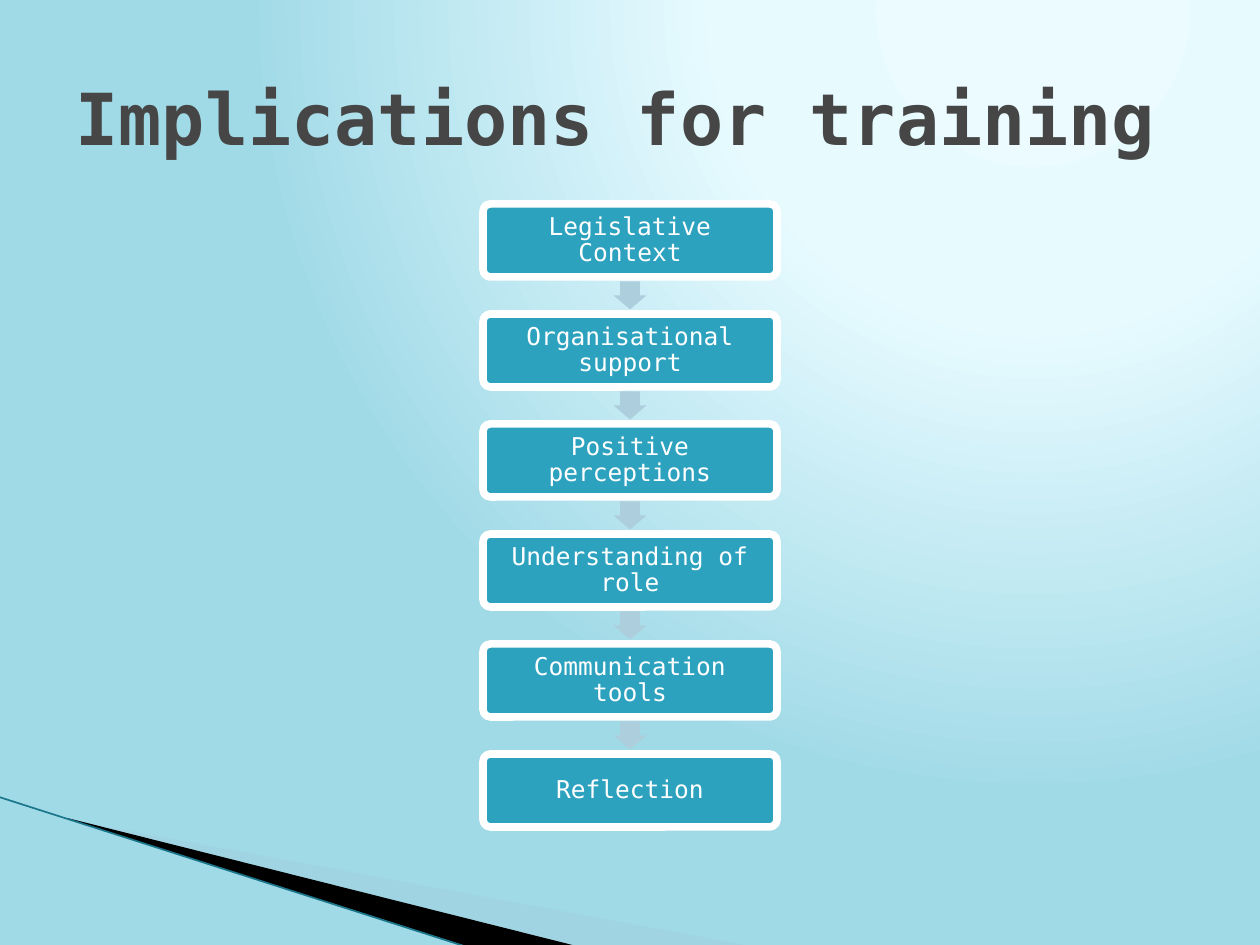
from lxml import etree
from pptx import Presentation
from pptx.dml.color import RGBColor
from pptx.enum.shapes import MSO_CONNECTOR, MSO_SHAPE
from pptx.enum.text import MSO_ANCHOR, PP_ALIGN
from pptx.oxml import parse_xml
from pptx.oxml.ns import nsdecls, qn
from pptx.util import Emu, Pt

EMU_PER_PX = 914400 / 126
FONT = "DejaVu Sans Mono"
WHITE = RGBColor(0xFF, 0xFF, 0xFF)
BLACK = RGBColor(0x00, 0x00, 0x00)
TITLE_GREY = RGBColor(0x46, 0x46, 0x46)
STEP_BLUE = RGBColor(0x2D, 0xA2, 0xBF)
ARROW_BLUE = RGBColor(0xAD, 0xCE, 0xDC)
WEDGE_BLUE = RGBColor(0xA0, 0xCB, 0xDC)
EDGE_TEAL = RGBColor(0x1A, 0x76, 0x8A)
SKY_STOPS = [
    (0, RGBColor(0xEB, 0xFB, 0xFF)),
    (40, RGBColor(0xE7, 0xFB, 0xFF)),
    (100, RGBColor(0xA1, 0xDA, 0xE7)),
]
STEPS = [
    "Legislative Context",
    "Organisational support",
    "Positive perceptions",
    "Understanding of role",
    "Communication tools",
    "Reflection",
]


def px(length):
    return Emu(round(length * EMU_PER_PX))


def format_text(paragraph, size, color, bold=False):
    for run in paragraph.runs:
        run.font.name = FONT
        run.font.size = Pt(size)
        run.font.bold = bold
        run.font.color.rgb = color


def paint(shape, color):
    shape.shadow.inherit = False
    shape.fill.solid()
    shape.fill.fore_color.rgb = color
    shape.line.fill.background()


def add_background(slide):
    """Radial gradient centred near the top right."""
    stops = "".join(
        f'<a:gs pos="{position * 1000}"><a:srgbClr val="{color}"/></a:gs>'
        for position, color in SKY_STOPS
    )
    background = parse_xml(
        f'<p:bg {nsdecls("p", "a")}><p:bgPr><a:gradFill rotWithShape="1">'
        f'<a:gsLst>{stops}</a:gsLst><a:path path="circle">'
        '<a:fillToRect l="65000" t="0" r="0" b="98000"/></a:path>'
        '</a:gradFill><a:effectLst/></p:bgPr></p:bg>'
    )
    slide.element.cSld.insert(0, background)


def add_wedge(slide, left, top, points, color):
    builder = slide.shapes.build_freeform(left + points[0][0], top + points[0][1], scale=EMU_PER_PX)
    builder.add_line_segments([(left + x, top + y) for x, y in points[1:]], close=True)
    wedge = builder.convert_to_shape()
    paint(wedge, color)
    return wedge


def add_corner(slide, left, top, width, height):
    """Swoosh in the bottom left corner."""
    pale = add_wedge(slide, left, top, [(69, 23), (750, 149), (575, 149), (69, 22)], WEDGE_BLUE)
    color = pale.fill._xPr.find(qn("a:solidFill"))[0]
    etree.SubElement(color, qn("a:alpha"), val="40000")

    add_wedge(slide, left, top, [(67, 21), (576, 149), (469, 150), (68, 22)], BLACK)

    edge = slide.shapes.add_connector(
        MSO_CONNECTOR.STRAIGHT, px(left - 1), px(top), px(left + width), px(top + height)
    )
    edge.line.color.rgb = EDGE_TEAL
    edge.line.width = Pt(0.95)
    etree.SubElement(edge.element.spPr, qn("a:effectLst"))


def add_title(slide, left, top, width, height):
    title = slide.shapes.title
    title.left, title.top, title.width, title.height = map(px, (left, top, width, height))
    text_frame = title.text_frame
    text_frame.text = "Implications for training"
    text_frame.vertical_anchor = MSO_ANCHOR.MIDDLE
    paragraph = text_frame.paragraphs[0]
    paragraph.alignment = PP_ALIGN.LEFT
    format_text(paragraph, 41, TITLE_GREY, bold=True)


def add_step(slide, text, left, top, width, height):
    step = slide.shapes.add_shape(
        MSO_SHAPE.ROUNDED_RECTANGLE, px(left), px(top), px(width), px(height)
    )
    step.adjustments[0] = 0.1
    paint(step, STEP_BLUE)
    step.line.color.rgb = WHITE
    step.line.width = Pt(4.33)
    text_frame = step.text_frame
    text_frame.text = text
    text_frame.word_wrap = True
    text_frame.vertical_anchor = MSO_ANCHOR.MIDDLE
    text_frame.margin_left = text_frame.margin_right = px(8)
    text_frame.margin_top = text_frame.margin_bottom = px(8)
    paragraph = text_frame.paragraphs[0]
    paragraph.alignment = PP_ALIGN.CENTER
    paragraph.line_spacing = 0.9
    format_text(paragraph, 14, WHITE)


def add_arrow(slide, center_x, center_y, length=28, breadth=33):
    """Block arrow turned to point down."""
    arrow = slide.shapes.add_shape(
        MSO_SHAPE.RIGHT_ARROW,
        px(center_x - length / 2), px(center_y - breadth / 2), px(length), px(breadth),
    )
    arrow.rotation = 90
    arrow.adjustments[0] = 0.6
    arrow.adjustments[1] = 0.5
    paint(arrow, ARROW_BLUE)


def add_process(slide, left, top, width, height, gap=37):
    """Equal steps from top to bottom, with an arrow in each gap."""
    step_height = (height - gap * (len(STEPS) - 1)) / len(STEPS)
    for index, text in enumerate(STEPS):
        step_top = top + index * (step_height + gap)
        if index:
            add_arrow(slide, left + width / 2, step_top - gap / 2)
        add_step(slide, text, left, step_top, width, step_height)


def main():
    presentation = Presentation()
    presentation.slide_width = px(1260)
    presentation.slide_height = px(945)
    slide = presentation.slides.add_slide(presentation.slide_layouts[5])
    add_background(slide)
    add_corner(slide, 0, 797, 467, 150)
    add_title(slide, 63, 38, 1134, 157)
    add_process(slide, 483, 204, 294, 623)
    presentation.save("out.pptx")


if __name__ == "__main__":
    main()
